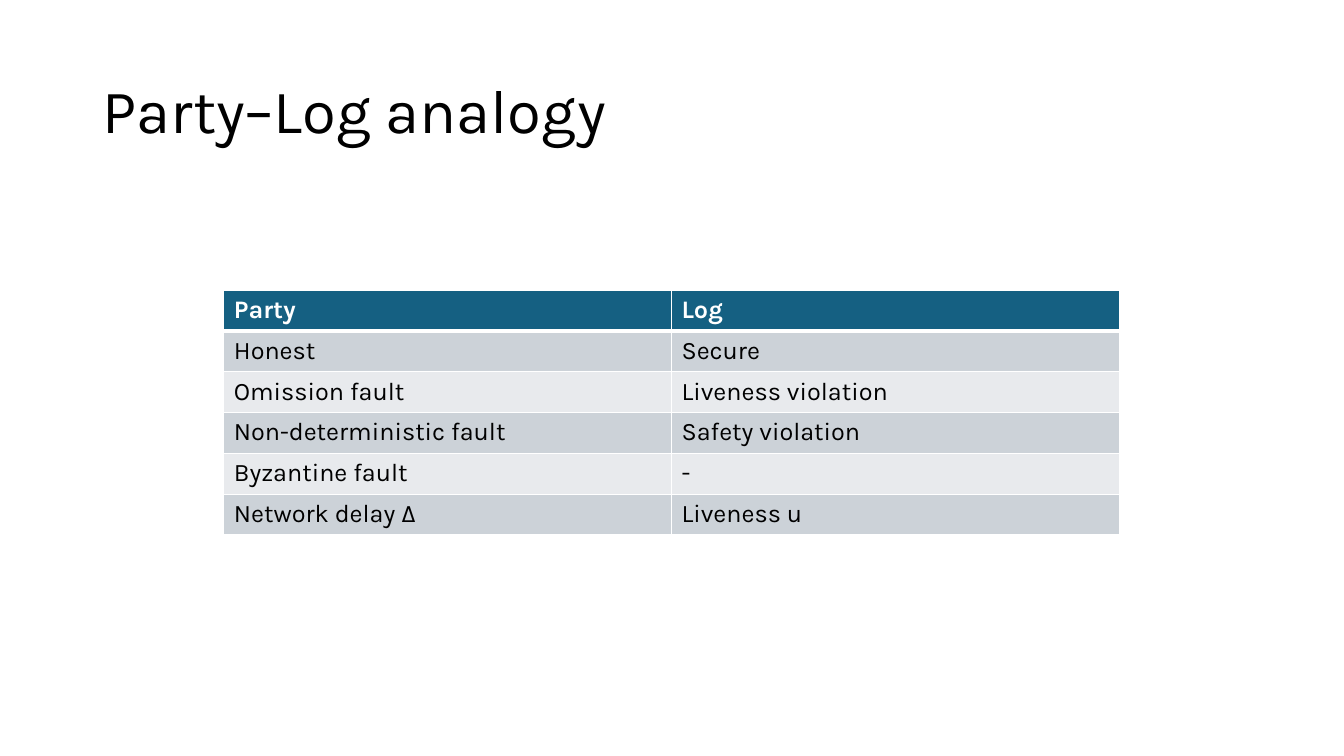
from pptx import Presentation
from pptx.dml.color import RGBColor
from pptx.enum.text import MSO_ANCHOR, PP_ALIGN
from pptx.oxml import parse_xml
from pptx.oxml.ns import nsdecls
from pptx.util import Inches, Pt

# Content
TITLE = "Party–Log analogy"
ROWS = [
    ("Party", "Log"),
    ("Honest", "Secure"),
    ("Omission fault", "Liveness violation"),
    ("Non-deterministic fault", "Safety violation"),
    ("Byzantine fault", "-"),
    ("Network delay Δ", "Liveness u"),
]

# Style
FONT = "Karla"
BLACK = RGBColor(0x00, 0x00, 0x00)
WHITE = RGBColor(0xFF, 0xFF, 0xFF)
TEAL = RGBColor(0x15, 0x60, 0x82)
BANDS = [RGBColor(0xE8, 0xEA, 0xED), RGBColor(0xCC, 0xD2, 0xD8)]
COL_W, ROW_H = 4.44, 0.405


def add_run(para, text, size, color, bold=False):
    run = para.add_run()
    run.text = text
    font = run.font
    font.name, font.size, font.bold = FONT, Pt(size), bold
    font.color.rgb = color


def add_edge(cell, side, width):
    cell._tc.get_or_add_tcPr().append(parse_xml(
        f'<a:ln{side} {nsdecls("a")} w="{Pt(width)}"><a:solidFill>'
        f'<a:srgbClr val="{WHITE}"/></a:solidFill></a:ln{side}>'))


deck = Presentation()
deck.slide_width, deck.slide_height = Inches(13.33), Inches(7.5)
slide = deck.slides.add_slide(deck.slide_layouts[5])

# Title
title = slide.shapes.title
title.left, title.top = Inches(0.92), Inches(0.4)
title.width, title.height = Inches(11.5), Inches(1.45)
frame = title.text_frame
frame.vertical_anchor = MSO_ANCHOR.MIDDLE
para = frame.paragraphs[0]
para.alignment = PP_ALIGN.LEFT
para.line_spacing = 0.9
add_run(para, TITLE, 44, BLACK)

# Table: header row, then alternating bands
count = len(ROWS)
table = slide.shapes.add_table(
    count, 2, Inches(2.22), Inches(2.88),
    Inches(2 * COL_W), Inches(count * ROW_H)).table
for col in table.columns:
    col.width = Inches(COL_W)
for i, texts in enumerate(ROWS):
    table.rows[i].height = Inches(ROW_H)
    head = i == 0
    for j, text in enumerate(texts):
        cell = table.cell(i, j)
        for side in "LRTB":
            thick = (head and side == "B") or (i == 1 and side == "T")
            add_edge(cell, side, 3 if thick else 1)
        cell.fill.solid()
        cell.fill.fore_color.rgb = TEAL if head else BANDS[i % 2]
        add_run(cell.text_frame.paragraphs[0], text, 18,
                WHITE if head else BLACK, head)

deck.save("out.pptx")
